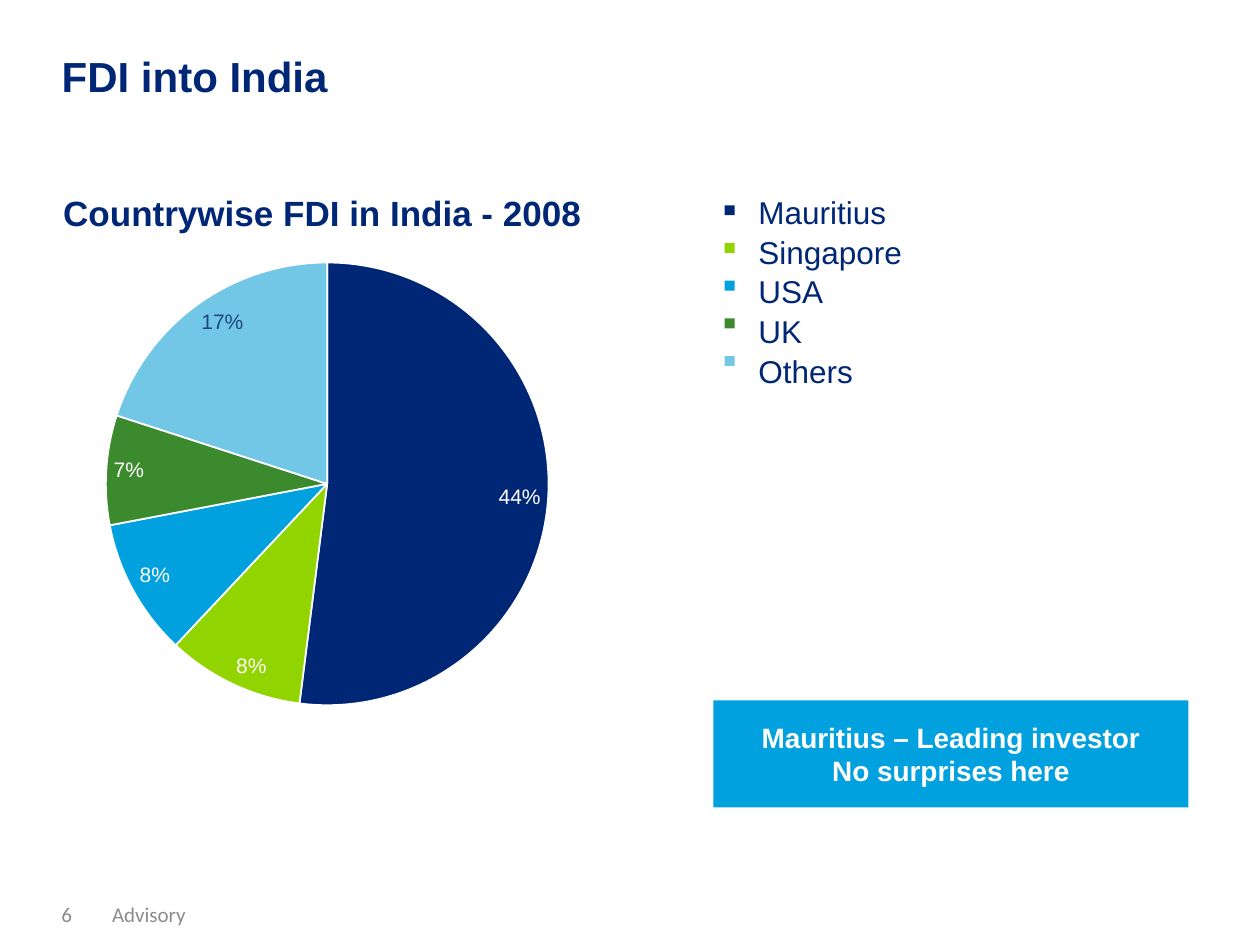
from lxml import etree
from pptx import Presentation
from pptx.chart.data import CategoryChartData
from pptx.dml.color import RGBColor
from pptx.enum.chart import XL_CHART_TYPE, XL_LABEL_POSITION
from pptx.enum.shapes import MSO_SHAPE
from pptx.enum.text import MSO_ANCHOR, PP_ALIGN
from pptx.oxml.ns import qn
from pptx.util import Cm, Pt

PIE = XL_CHART_TYPE.PIE
INSIDE_END = XL_LABEL_POSITION.INSIDE_END
RECTANGLE = MSO_SHAPE.RECTANGLE
TOP, MIDDLE = MSO_ANCHOR.TOP, MSO_ANCHOR.MIDDLE
LEFT, CENTER = PP_ALIGN.LEFT, PP_ALIGN.CENTER

NAVY = RGBColor(0x00, 0x27, 0x76)
LIME = RGBColor(0x92, 0xD4, 0x00)
BLUE = RGBColor(0x00, 0xA1, 0xDE)
GREEN = RGBColor(0x3C, 0x8A, 0x2E)
SKY = RGBColor(0x72, 0xC7, 0xE7)
SLATE = RGBColor(0x1F, 0x49, 0x7D)
GREY = RGBColor(0x8C, 0x8C, 0x8C)
WHITE = RGBColor(0xFF, 0xFF, 0xFF)

# Content
TITLE = "FDI into India"
CHART_HEADING = "Countrywise FDI in India - 2008"
# country, chart category, slice size, slice label, slice colour, label colour
INVESTORS = [
    ("Mauritius", "A", 52, "44%", NAVY, WHITE),
    ("Singapore", "B", 10, "8%", LIME, WHITE),
    ("USA", "C", 10, "8%", BLUE, WHITE),
    ("UK", "D", 8, "7%", GREEN, WHITE),
    ("Others", "E", 20, "17%", SKY, SLATE),
]
CALLOUT = ["Mauritius – Leading investor", "No surprises here"]
PAGE_NUMBER = "6"
FOOTER = "Advisory"

# Layout, in cm
MARGIN = 0.99
PLOT_AREA = {"x": 0.08, "y": 0.05, "w": 0.88, "h": 0.87}
KEY_LEFT, KEY_TOP, KEY_STEP, KEY_SIZE = 14.61, 4.14, 0.76, 0.2


def write(shape, lines, size, color, bold=False, font="Arial",
          align=LEFT, anchor=TOP, wrap=True, spacing=None):
    frame = shape.text_frame
    frame.text = "\n".join(lines)
    frame.word_wrap = wrap
    frame.vertical_anchor = anchor
    for paragraph in frame.paragraphs:
        paragraph.alignment = align
        paragraph.line_spacing = spacing
        for run in paragraph.runs:
            run.font.name = font
            run.font.size = Pt(size)
            run.font.bold = bold
            run.font.color.rgb = color


def add_text(left, top, width, height, lines, *style, **options):
    box = slide.shapes.add_textbox(Cm(left), Cm(top), Cm(width), Cm(height))
    write(box, lines, *style, **options)


def add_rectangle(left, top, width, height, color):
    box = slide.shapes.add_shape(RECTANGLE, Cm(left), Cm(top), Cm(width), Cm(height))
    box.shadow.inherit = False
    box.fill.solid()
    box.fill.fore_color.rgb = color
    box.line.fill.background()
    return box


def place_plot(chart, area):
    plot_area = chart._chartSpace.chart.plotArea
    for old in plot_area.findall(qn("c:layout")):
        plot_area.remove(old)
    layout = etree.Element(qn("c:layout"))
    manual = etree.SubElement(layout, qn("c:manualLayout"))
    settings = {"layoutTarget": "inner", "xMode": "edge", "yMode": "edge", **area}
    for tag, value in settings.items():
        etree.SubElement(manual, qn(f"c:{tag}")).set("val", str(value))
    plot_area.insert(0, layout)


prs = Presentation()
prs.slide_width, prs.slide_height = Cm(25.4), Cm(19.05)
slide = prs.slides.add_slide(prs.slide_layouts[5])

# Title
title = slide.shapes.title
title.left, title.top, title.width, title.height = Cm(MARGIN), Cm(0.66), Cm(16), Cm(1.75)
write(title, [TITLE], 24, NAVY, bold=True, anchor=MIDDLE)

# Pie chart with its heading
data = CategoryChartData()
data.categories = [category for _, category, *_ in INVESTORS]
data.add_series("Series 1", [share for _, _, share, *_ in INVESTORS])
chart = slide.shapes.add_chart(
    PIE, Cm(0.43), Cm(4.78), Cm(11.86), Cm(10.26), data).chart
chart.has_legend = False
chart.has_title = False
chart.font.name, chart.font.size = "Calibri", Pt(12)
chart.plots[0].vary_by_categories = True
place_plot(chart, PLOT_AREA)
pie = chart.plots[0].series[0]
for index, (_, _, _, label_text, color, label_color) in enumerate(INVESTORS):
    point = pie.points[index]
    point.format.fill.solid()
    point.format.fill.fore_color.rgb = color
    point.format.line.color.rgb = WHITE
    point.format.line.width = Pt(1)
    label = point.data_label
    label.text_frame.text = label_text
    label.position = INSIDE_END
    label_font = label.text_frame.paragraphs[0].runs[0].font
    label_font.name, label_font.size = "Arial", Pt(12)
    label_font.color.rgb = label_color
add_text(MARGIN, 3.73, 11.02, 1.12, [CHART_HEADING], 20, NAVY, bold=True,
         align=CENTER, wrap=False)

# Colour key
for index, (_, _, _, _, color, _) in enumerate(INVESTORS):
    add_rectangle(KEY_LEFT, KEY_TOP + index * KEY_STEP, KEY_SIZE, KEY_SIZE, color)
add_text(15.04, 3.73, 3.43, 4.11, [country for country, *_ in INVESTORS],
         18, NAVY, wrap=False, spacing=1.05)

# Callout
callout = add_rectangle(14.38, 14.12, 9.58, 2.16, BLUE)
write(callout, CALLOUT, 16, WHITE, bold=True, align=CENTER, anchor=MIDDLE)

# Footer
for left, width, text in [(MARGIN, 1, PAGE_NUMBER), (2.01, 15, FOOTER)]:
    add_text(left, 18.26, width, 0.33, [text], 12, GREY, font="Calibri", anchor=MIDDLE)

prs.save("out.pptx")
